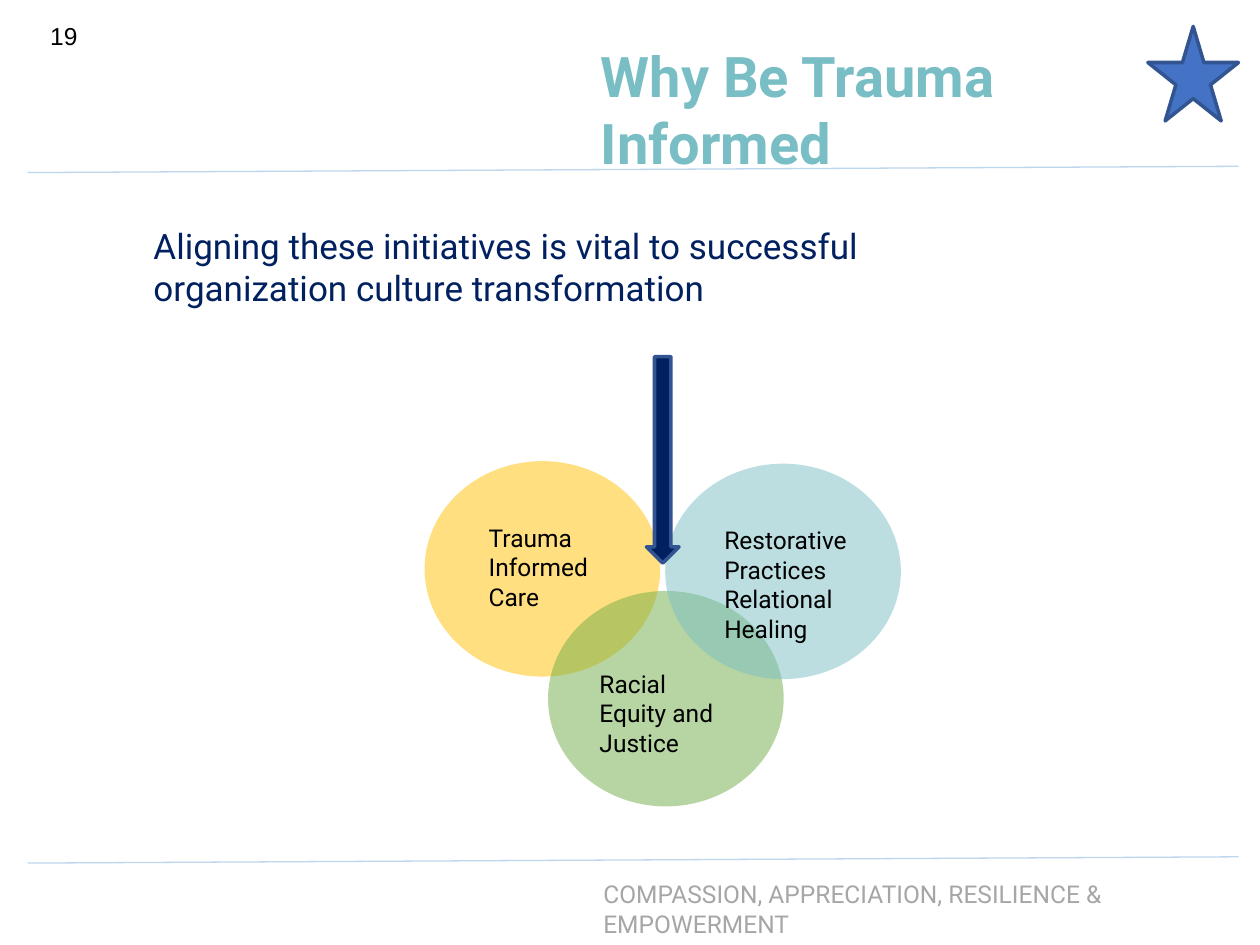
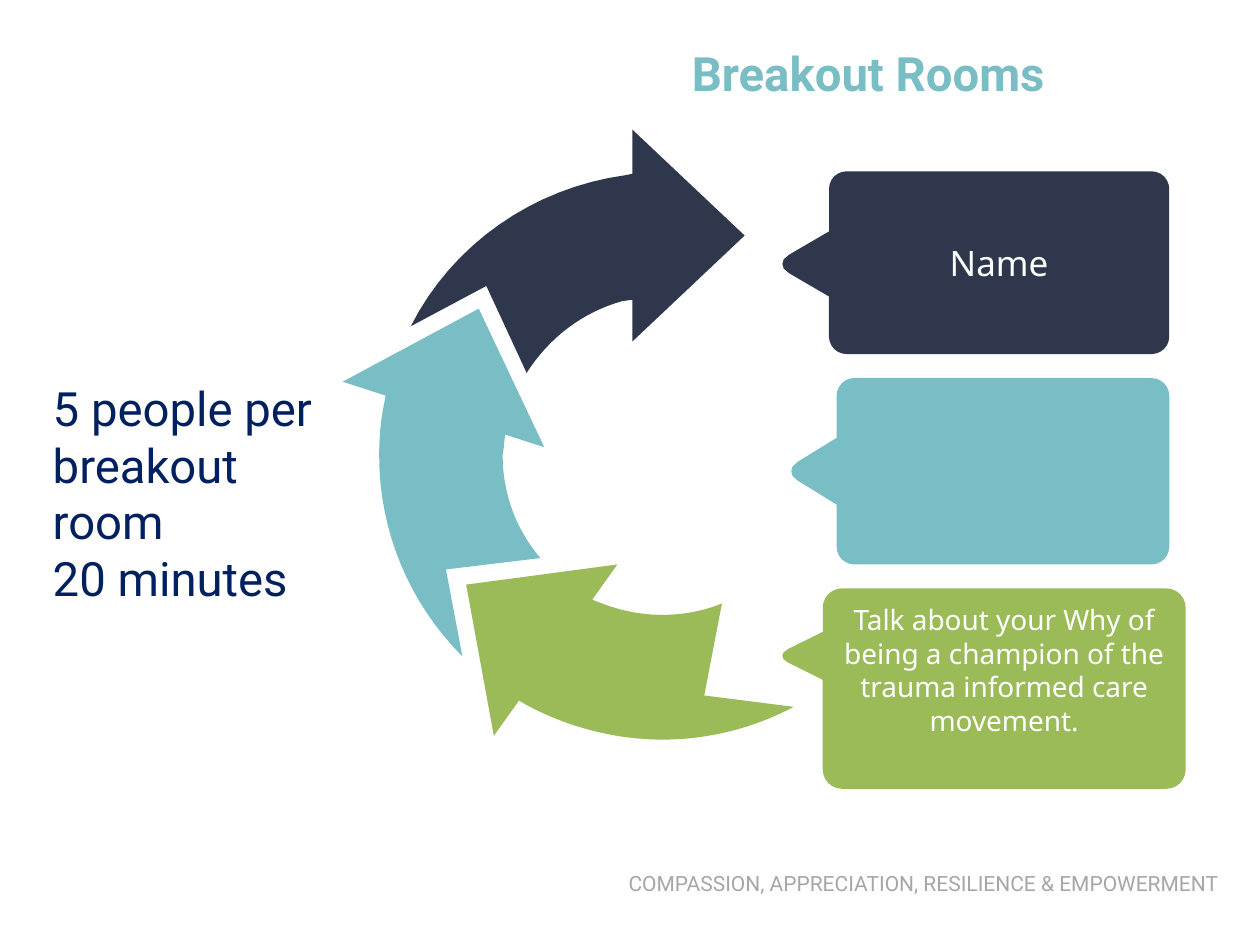
from lxml import etree
from pptx import Presentation
from pptx.dml.color import RGBColor
from pptx.enum.shapes import MSO_CONNECTOR as Connector, MSO_SHAPE as Preset
from pptx.enum.text import MSO_ANCHOR as Anchor, PP_ALIGN as Align
from pptx.oxml.ns import qn
from pptx.util import Inches, Pt

TEAL, NAVY, SLATE, GREEN = "7ABEC5", "002060", "2E374C", "9BBB59"
GREY, RULE, OUTLINE, STAR = "A6A6A6", "BDD7EE", "325491", "4472C4"
BLACK, WHITE = "000000", "FFFFFF"
MOTTO = "COMPASSION, APPRECIATION, RESILIENCE & EMPOWERMENT"

WHY_TITLE = "Why Be Trauma Informed"
WHY_LEAD = "Aligning these initiatives is vital to successful organization culture transformation"
RULE_STARTS = [1.37, 6.85]
CIRCLE_SIZE = (1.87, 1.71)
CIRCLES = [(3.37, 3.66, "FFC000"), (4.35, 4.69, "70AD47"), (5.28, 3.68, TEAL)]
CIRCLE_LABELS = [
    (["Trauma Informed", "Care"], (3.78, 4.1, 1.45, 0.81)),
    (["Restorative Practices Relational Healing"], (5.65, 4.12, 1.24, 1.04)),
    (["Racial Equity and Justice"], (4.66, 5.26, 1.24, 0.57)),
]

ROOMS_TITLE = "Breakout Rooms"
ROOMS_LEAD = ["5 people per breakout room", "20 minutes"]
CYCLE_ARROWS = [
    (GREEN, [(4.78, 4.79), (4.7, 4.76), (4.9, 4.48), (3.7, 4.64), (3.92, 5.84),
             (4.12, 5.56), (4.17, 5.59), (4.5, 5.77, 4.88, 5.87, 5.26, 5.87),
             (5.62, 5.87, 5.98, 5.78, 6.3, 5.61), (5.59, 5.52), (5.73, 4.79),
             (5.58, 4.85, 5.42, 4.88, 5.26, 4.88),
             (5.09, 4.88, 4.94, 4.85, 4.78, 4.79)]),
    (TEAL, [(4, 3.53), (4.01, 3.45), (4.32, 3.55), (3.8, 2.45), (2.72, 3.03),
            (3.06, 3.14), (3.05, 3.2), (3.02, 3.34, 3.01, 3.48, 3.01, 3.62),
            (3.01, 4.22, 3.25, 4.79, 3.67, 5.21), (3.54, 4.52), (4.29, 4.43),
            (4.1, 4.21, 3.99, 3.92, 3.99, 3.62),
            (3.99, 3.59, 4, 3.56, 4, 3.53)]),
    (SLATE, [(4.94, 2.39), (5.02, 2.38), (5.02, 2.71), (5.91, 1.87), (5.02, 1.03),
             (5.02, 1.38), (4.97, 1.39), (4.23, 1.49, 3.59, 1.94, 3.26, 2.59),
             (3.86, 2.27), (4.18, 2.96), (4.36, 2.68, 4.62, 2.48, 4.94, 2.39)]),
]
CARDS = [
    (TEAL, (6.64, 3, 2.64, 1.48), (6.28, 3.43, 0.51, 0.62), "", {}),
    (SLATE, (6.58, 1.36, 2.7, 1.45), (6.21, 1.79, 0.53, 0.61), "Name", dict(size=20)),
    (GREEN, (6.53, 4.67, 2.88, 1.59), (6.21, 4.98, 0.46, 0.45),
     "Talk about your Why of being a champion of the trauma informed care movement.",
     dict(size=16, bottom=0.35)),
]
POINTER_TOP = [(1, 0.14), (0.96, 0.03), (0.87, 0), (0.79, 0.03),
               (0.1, 0.38), (0.02, 0.44), (0, 0.5)]


def rgb(color):
    return RGBColor.from_string(color)


def box(at):
    return [Inches(length) for length in at]


def write(frame, lines, size, color, font="Roboto", bold=False, align=None,
          anchor=Anchor.TOP, indent=0, spacing=None, bottom=0.05):
    frame.word_wrap = True
    frame.vertical_anchor = anchor
    frame.margin_bottom = Inches(bottom)
    for index, line in enumerate(lines):
        para = frame.add_paragraph() if index else frame.paragraphs[0]
        if indent:
            para._p.get_or_add_pPr().set("marL", str(Inches(indent)))
        para.alignment = align
        para.line_spacing = spacing
        run = para.add_run()
        run.text = line
        run.font.size, run.font.bold, run.font.name = Pt(size), bold, font
        run.font.color.rgb = rgb(color)


def add_text(slide, lines, at, **style):
    write(slide.shapes.add_textbox(*box(at)).text_frame, lines, **style)


def paint(shape, fill, line=None, alpha=None):
    shape.shadow.inherit = False
    shape.fill.solid()
    shape.fill.fore_color.rgb = rgb(fill)
    if alpha:
        tint = shape._element.spPr.find(qn("a:solidFill"))[0]
        etree.SubElement(tint, qn("a:alpha")).set("val", str(alpha * 1000))
    if line:
        shape.line.color.rgb = rgb(line)
        shape.line.width = Pt(2)
    else:
        shape.line.fill.background()
    return shape


def add_preset(slide, preset, at, fill, **look):
    return paint(slide.shapes.add_shape(preset, *box(at)), fill, **look)


def add_outline(slide, points, fill):
    corners = [box(point) for point in points]
    builder = slide.shapes.build_freeform(*corners[0])
    builder.add_line_segments(corners[1:], close=True)
    paint(builder.convert_to_shape(), fill)


def add_rule(slide, start):
    rule = slide.shapes.add_connector(
        Connector.STRAIGHT, *box((0.22, start, 9.83, start - 0.05)))
    rule.line.color.rgb = rgb(RULE)
    rule.line.width = Pt(0.75)
    etree.SubElement(rule._element.spPr, qn("a:effectLst"))


def trace(segments, steps=16):
    points = [segments[0]]
    for segment in segments[1:]:
        if len(segment) == 2:
            points.append(segment)
            continue
        ends = [points[-1], segment[:2], segment[2:4], segment[4:]]
        for step in range(1, steps + 1):
            t = step / steps
            weights = ((1 - t) ** 3, 3 * t * (1 - t) ** 2, 3 * t * t * (1 - t), t ** 3)
            points.append(tuple(sum(w * end[axis] for w, end in zip(weights, ends))
                                for axis in (0, 1)))
    return points


def pointer_points(left, top, width, height):
    mirrored = [(x, 1 - y) for x, y in reversed(POINTER_TOP[:-1])]
    return [(left + x * width, top + y * height) for x, y in POINTER_TOP + mirrored]


def add_title(slide, title, at, **style):
    add_text(slide, [title], at, color=TEAL, bold=True, **style)


def add_motto(slide, at, **style):
    add_text(slide, [MOTTO], at, color=GREY, **style)


def build_why(slide):
    add_motto(slide, (4.57, 6.93, 5.74, 0.34), size=14, indent=0.12)
    for start in RULE_STARTS:
        add_rule(slide, start)
    add_text(slide, [WHY_LEAD], (1.12, 1.73, 7.06, 0.77), size=20, color=NAVY)
    for left, top, fill in CIRCLES:
        add_preset(slide, Preset.OVAL, (left, top, *CIRCLE_SIZE), fill, alpha=50)
    add_preset(slide, Preset.DOWN_ARROW, (5.13, 2.83, 0.26, 1.64), NAVY, line=OUTLINE)
    for lines, at in CIRCLE_LABELS:
        add_text(slide, lines, at, size=14, color=BLACK)
    add_title(slide, WHY_TITLE, (4.67, 0.28, 4.72, 1.18), size=32)
    add_text(slide, ["19"], (0.3, 0.12, 0.5, 0.34), size=14, color=BLACK, font="Arial")
    add_preset(slide, Preset.STAR_5_POINT, (9.11, 0.21, 0.72, 0.75), STAR, line=OUTLINE)


def build_rooms(slide):
    add_title(slide, ROOMS_TITLE, (3.88, 0.06, 6.02, 1.09), size=27,
              align=Align.CENTER, anchor=Anchor.MIDDLE, spacing=0.9)
    add_text(slide, ROOMS_LEAD, (0.32, 2.96, 2.61, 1.46), size=27, color=NAVY)
    add_motto(slide, (4.8, 6.86, 5.1, 0.3), size=12, indent=0.09)
    for fill, segments in CYCLE_ARROWS:
        add_outline(slide, trace(segments), fill)
    for fill, at, pointer, message, style in CARDS:
        card = add_preset(slide, Preset.ROUNDED_RECTANGLE, at, fill)
        card.adjustments[0] = 0.096
        if message:
            write(card.text_frame, [message], color=WHITE, font="Noto Sans",
                  align=Align.CENTER, anchor=Anchor.MIDDLE, **style)
        add_outline(slide, pointer_points(*pointer), fill)


def main():
    deck = Presentation()
    deck.slide_width, deck.slide_height = Inches(10), Inches(7.5)
    for build in (build_why, build_rooms):
        build(deck.slides.add_slide(deck.slide_layouts[6]))
    deck.save("out.pptx")


if __name__ == "__main__":
    main()
